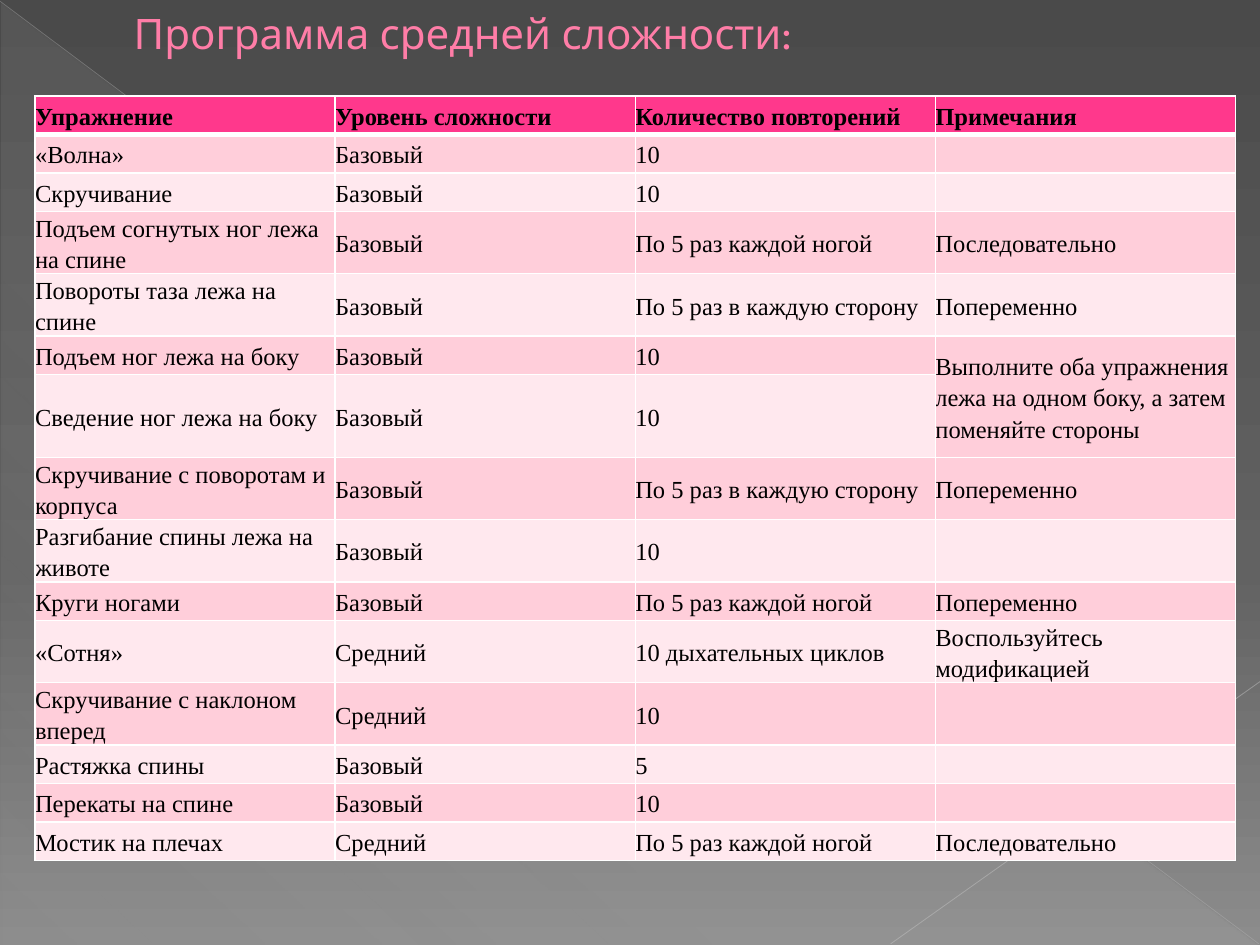
"""Build a slide with a table of medium-difficulty exercises."""
from lxml import etree
from pptx import Presentation
from pptx.dml.color import RGBColor
from pptx.enum import shapes, text
from pptx.oxml.ns import qn
from pptx.util import Pt

C = {"title": "FF7DA7", "outline": "B12761", "head": "FF388C", "odd": "FFCEDA",
     "even": "FFE8EE", "text": "000000", "border": "FFFFFF", "glow": "D2D2D2",
     "diagonal": "BFBFBF", "corner": "C6C6C6",
     "top": "4A4A4A", "middle": "626262", "bottom": "8C8C8C"}


def add_color(parent, color, alpha=100):
    clr = etree.SubElement(parent, qn("a:srgbClr"), val=C[color])
    if alpha < 100:
        etree.SubElement(clr, qn("a:alpha"), val=str(alpha * 1000))


def set_gradient(element, stops, angle):
    grad = element.find(".//" + qn("a:gradFill"))
    for child in list(grad):
        grad.remove(child)
    gs_list = etree.SubElement(grad, qn("a:gsLst"))
    for pos, color, alpha in stops:
        gs = etree.SubElement(gs_list, qn("a:gs"), pos=str(pos * 1000))
        add_color(gs, color, alpha)
    etree.SubElement(grad, qn("a:lin"), ang=str(angle * 60000), scaled="0")


prs = Presentation()
prs.slide_width, prs.slide_height = Pt(720), Pt(540)
s = prs.slides.add_slide(prs.slide_layouts[5])
s.background.fill.gradient()
set_gradient(s.element, [(0, "top", 100), (60, "middle", 100), (100, "bottom", 100)], 90)

sp = s.shapes.add_shape(shapes.MSO_SHAPE.RIGHT_TRIANGLE, Pt(0.7), Pt(1.4), Pt(718.6), Pt(538.6))
sp.shadow.inherit = False
sp.line.fill.background()
sp.fill.gradient()
set_gradient(sp.element, [(0, "glow", 10), (70, "glow", 8), (100, "glow", 1)], 133)

for x1, y1, x2, y2, color, width, alpha in [
        (0, 0.7, 719.3, 539.3, "diagonal", 0.39, 35),
        (720, 389.5, 509, 539.3, "corner", 0.47, 45)]:
    line = s.shapes.add_connector(shapes.MSO_CONNECTOR.STRAIGHT, Pt(x1), Pt(y1), Pt(x2), Pt(y2))
    line.line.width = Pt(width)
    line.line.color.rgb = RGBColor.from_string(C[color])
    clr = line.element.spPr.find(".//" + qn("a:srgbClr"))
    etree.SubElement(clr, qn("a:alpha"), val=str(alpha * 1000))
    etree.SubElement(line.element.spPr, qn("a:effectLst"))

title = s.shapes.title
title.element.getparent().append(title.element)
title.left, title.top, title.width, title.height = Pt(31), Pt(0), Pt(640.8), Pt(37.4)
tf = title.text_frame
tf.word_wrap = True
tf.auto_size = text.MSO_AUTO_SIZE.NONE
tf.vertical_anchor = text.MSO_ANCHOR.MIDDLE
p = tf.paragraphs[0]
p.alignment = text.PP_ALIGN.LEFT
pPr = p._p.get_or_add_pPr()
pPr.set("marL", str(Pt(38.2)))
pPr.set("indent", "0")
r = p.add_run()
r.text = "Программа средней сложности:"
r.font.size = Pt(24)
r.font.name = "League Spartan"
r.font.color.rgb = RGBColor.from_string(C["title"])
outline = etree.Element(qn("a:ln"), w=str(Pt(0.5)))
add_color(etree.SubElement(outline, qn("a:solidFill")), "outline")
r.font._element.insert(0, outline)

BASE, MID = "Базовый", "Средний"
EACH_LEG, EACH_SIDE = "По 5 раз каждой ногой", "По 5 раз в каждую сторону"
IN_TURN, ALTERNATE = "Последовательно", "Попеременно"
rows = [
    (22, "Упражнение", "Уровень сложности", "Количество повторений", "Примечания"),
    (22, "«Волна»", BASE, "10", ""),
    (22, "Скручивание", BASE, "10", ""),
    (35, "Подъем согнутых ног лежа на спине", BASE, EACH_LEG, IN_TURN),
    (35, "Повороты таза лежа на спине", BASE, EACH_SIDE, ALTERNATE),
    (22, "Подъем ног лежа на боку", BASE, "10",
     "Выполните оба упражнения лежа на одном боку, а затем поменяйте стороны"),
    (47.4, "Сведение ног лежа на боку", BASE, "10", ""),
    (35, "Скручивание с поворотам и корпуса", BASE, EACH_SIDE, ALTERNATE),
    (35, "Разгибание спины лежа на животе", BASE, "10", ""),
    (22, "Круги ногами", BASE, EACH_LEG, ALTERNATE),
    (35, "«Сотня»", MID, "10 дыхательных циклов", "Воспользуйтесь модификацией"),
    (35, "Скручивание с наклоном вперед", MID, "10", ""),
    (22, "Растяжка спины", BASE, "5", ""),
    (22, "Перекаты на спине", BASE, "10", ""),
    (22, "Мостик на плечах", MID, EACH_LEG, IN_TURN),
]
frame = s.shapes.add_table(len(rows), 4, Pt(20), Pt(54.8), Pt(686), Pt(455.8))
table = frame.table
for col in table.columns:
    col.width = Pt(171.5)
for i, (height, *values) in enumerate(rows):
    table.rows[i].height = Pt(height)
    fill = "head" if i == 0 else "odd" if i % 2 else "even"
    for j, value in enumerate(values):
        cell = table.cell(i, j)
        cell.margin_left = cell.margin_right = cell.margin_top = cell.margin_bottom = 0
        cell.vertical_anchor = text.MSO_ANCHOR.MIDDLE
        cell.fill.solid()
        cell.fill.fore_color.rgb = RGBColor.from_string(C[fill])
        tcPr = cell._tc.get_or_add_tcPr()
        for k, side in enumerate(("a:lnL", "a:lnR", "a:lnT", "a:lnB")):
            thick = (i == 0 and side == "a:lnB") or (i == 1 and side == "a:lnT")
            ln = etree.Element(qn(side), w=str(Pt(3 if thick else 1)))
            add_color(etree.SubElement(ln, qn("a:solidFill")), "border")
            tcPr.insert(k, ln)
        if value:
            p = cell.text_frame.paragraphs[0]
            p.line_spacing = 1.15
            r = p.add_run()
            r.text = value
            r.font.size = Pt(14)
            r.font.name = "Times New Roman"
            r.font.bold = i == 0
            r.font.color.rgb = RGBColor.from_string(C["text"])
table.cell(5, 3).merge(table.cell(6, 3))

prs.save("out.pptx")
